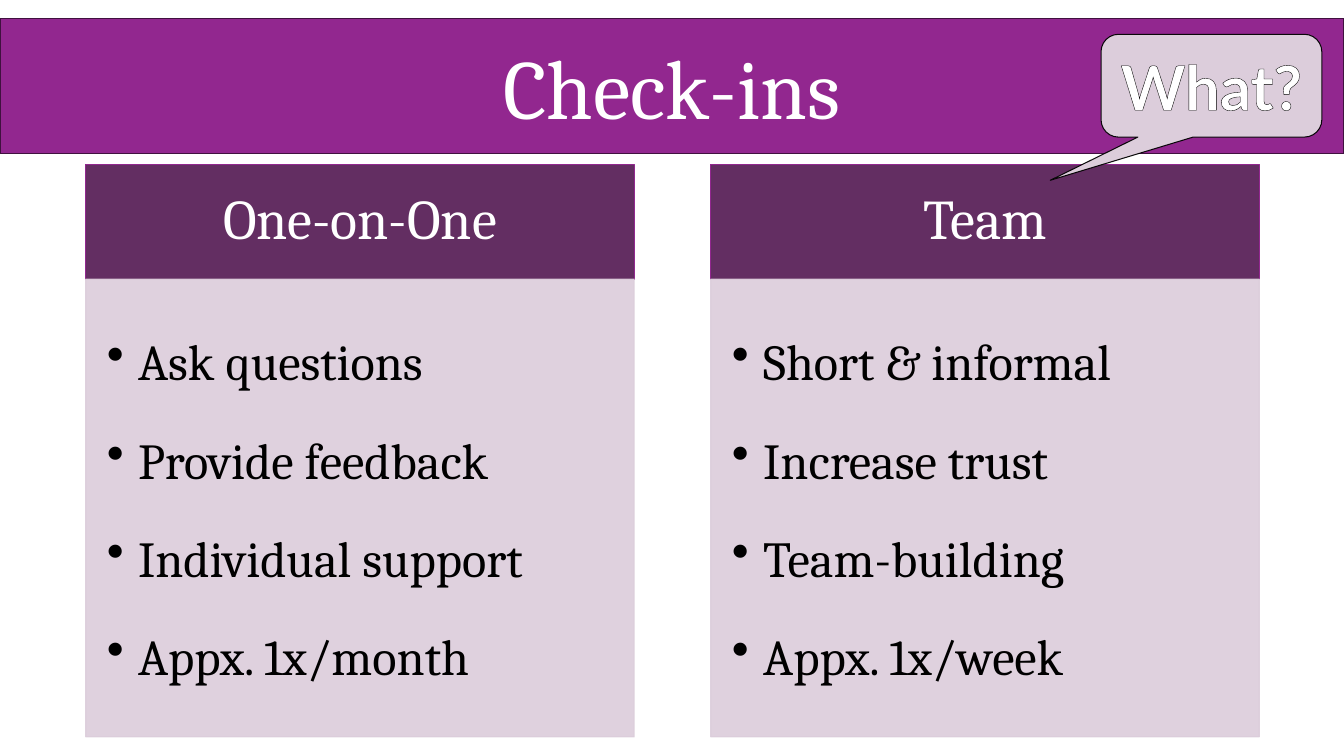
"""Build the Check-ins slide: a title band, two topic columns and a callout."""
import pptx
import pptx.dml.color
import pptx.enum.shapes
import pptx.enum.text
import pptx.oxml.ns
import pptx.util
from lxml import etree

Inches, Pt = pptx.util.Inches, pptx.util.Pt
RGBColor = pptx.dml.color.RGBColor
ALIGN, ANCHOR = pptx.enum.text.PP_ALIGN, pptx.enum.text.MSO_ANCHOR
SHAPE = pptx.enum.shapes.MSO_SHAPE
qn = pptx.oxml.ns.qn

WHITE = RGBColor(0xFF, 0xFF, 0xFF)
BLACK = RGBColor(0x00, 0x00, 0x00)
PURPLE = RGBColor(0x92, 0x27, 0x8F)
DARK_PURPLE = RGBColor(0x40, 0x11, 0x3F)
PLUM = RGBColor(0x63, 0x2E, 0x62)
LILAC = RGBColor(0xDC, 0xCD, 0xDB)

COLUMN_LEFT, COLUMN_STEP, COLUMN_WIDTH = 0.85, 6.2, 5.44
HEADER_TOP, HEADER_HEIGHT, BODY_HEIGHT = 1.63, 1.14, 4.54
BULLET_INDENT = Inches(0.31)

HEADER_FRAME = {"margin_left": Inches(0.31), "margin_right": Inches(0.31),
                "margin_top": Inches(0.18), "margin_bottom": Inches(0.18),
                "vertical_anchor": ANCHOR.MIDDLE, "word_wrap": True}
BODY_FRAME = {"margin_left": Inches(0.21), "margin_right": Inches(0.28),
              "margin_top": Inches(0.21), "margin_bottom": Inches(0.32),
              "vertical_anchor": ANCHOR.TOP, "word_wrap": True}
CENTRED_FRAME = {"vertical_anchor": ANCHOR.MIDDLE, "word_wrap": True,
                 "auto_size": pptx.enum.text.MSO_AUTO_SIZE.NONE}
CENTRED = {"alignment": ALIGN.CENTER}
HEADER_PARAGRAPH = {"alignment": ALIGN.CENTER, "line_spacing": 0.9}
BULLET_PARAGRAPH = {"alignment": ALIGN.LEFT, "level": 1,
                    "line_spacing": 1.5, "space_after": Pt(5.4)}

COLUMNS = {
    "One-on-One": ["Ask questions", "Provide feedback",
                   "Individual support", "Appx. 1x/month"],
    "Team": ["Short & informal", "Increase trust",
             "Team-building", "Appx. 1x/week"],
}


def paint(shape, fill, line, width=0.85, fill_alpha=100, line_alpha=100):
    """Set fill, outline and their opacity in percent."""
    shape.shadow.inherit = False
    shape.fill.solid()
    shape.fill.fore_color.rgb = fill
    shape.line.color.rgb = line
    shape.line.width = Pt(width)
    properties = shape.element.spPr
    for place, alpha in (("a:solidFill", fill_alpha), ("a:ln/a:solidFill", line_alpha)):
        if alpha < 100:
            color = properties.find("/".join(map(qn, place.split("/"))))[0]
            etree.SubElement(color, qn("a:alpha")).set("val", str(alpha * 1000))


def write(shape, lines, frame_format, paragraph_format, size, color,
          font="Cambria", bullet=None):
    """Write one paragraph per line with the given formats."""
    frame = shape.text_frame
    frame.text = "\n".join(lines)
    for name, value in frame_format.items():
        setattr(frame, name, value)
    for paragraph in frame.paragraphs:
        if bullet:
            properties = paragraph._p.get_or_add_pPr()
            properties.set("marL", str(BULLET_INDENT))
            properties.set("indent", str(-BULLET_INDENT))
            etree.SubElement(properties, qn("a:buChar")).set("char", bullet)
        for name, value in paragraph_format.items():
            setattr(paragraph, name, value)
        run_font = paragraph.runs[0].font
        run_font.name, run_font.size = font, Pt(size)
        run_font.color.rgb = color


presentation = pptx.Presentation()
presentation.slide_width = Inches(13.33)
presentation.slide_height = Inches(7.5)
slide = presentation.slides.add_slide(presentation.slide_layouts[5])

title = slide.shapes.title
title.left, title.top = 0, Inches(0.18)
title.width, title.height = presentation.slide_width, Inches(1.34)
paint(title, PURPLE, DARK_PURPLE)
write(title, ["Check-ins"], CENTRED_FRAME, CENTRED, 60, WHITE)

for index, (heading, points) in enumerate(COLUMNS.items()):
    left, width = Inches(COLUMN_LEFT + index * COLUMN_STEP), Inches(COLUMN_WIDTH)
    header = slide.shapes.add_shape(
        SHAPE.RECTANGLE, left, Inches(HEADER_TOP), width, Inches(HEADER_HEIGHT))
    paint(header, PLUM, PURPLE)
    write(header, [heading], HEADER_FRAME, HEADER_PARAGRAPH, 40, WHITE)

    body = slide.shapes.add_shape(
        SHAPE.RECTANGLE, left, Inches(HEADER_TOP + HEADER_HEIGHT), width, Inches(BODY_HEIGHT))
    paint(body, LILAC, LILAC, fill_alpha=90, line_alpha=90)
    write(body, points, BODY_FRAME, BULLET_PARAGRAPH, 36, BLACK, bullet="•")

callout = slide.shapes.add_shape(
    SHAPE.ROUNDED_RECTANGULAR_CALLOUT,
    Inches(10.92), Inches(0.34), Inches(2.19), Inches(1.02))
for index, adjustment in enumerate((-0.73, 0.92, 0.17)):
    callout.adjustments[index] = adjustment
paint(callout, LILAC, BLACK, width=0.75, line_alpha=95)
write(callout, ["What?"], CENTRED_FRAME, CENTRED, 44, WHITE, font="Lato")
callout_run = callout.text_frame.paragraphs[0].runs[0]
callout_run.font.bold = True
outline = etree.Element(qn("a:ln"), w=str(Pt(1.75)))
outline_fill = etree.SubElement(outline, qn("a:solidFill"))
etree.SubElement(outline_fill, qn("a:srgbClr")).set("val", str(BLACK))
callout_run._r.get_or_add_rPr().insert(0, outline)

presentation.save("out.pptx")
